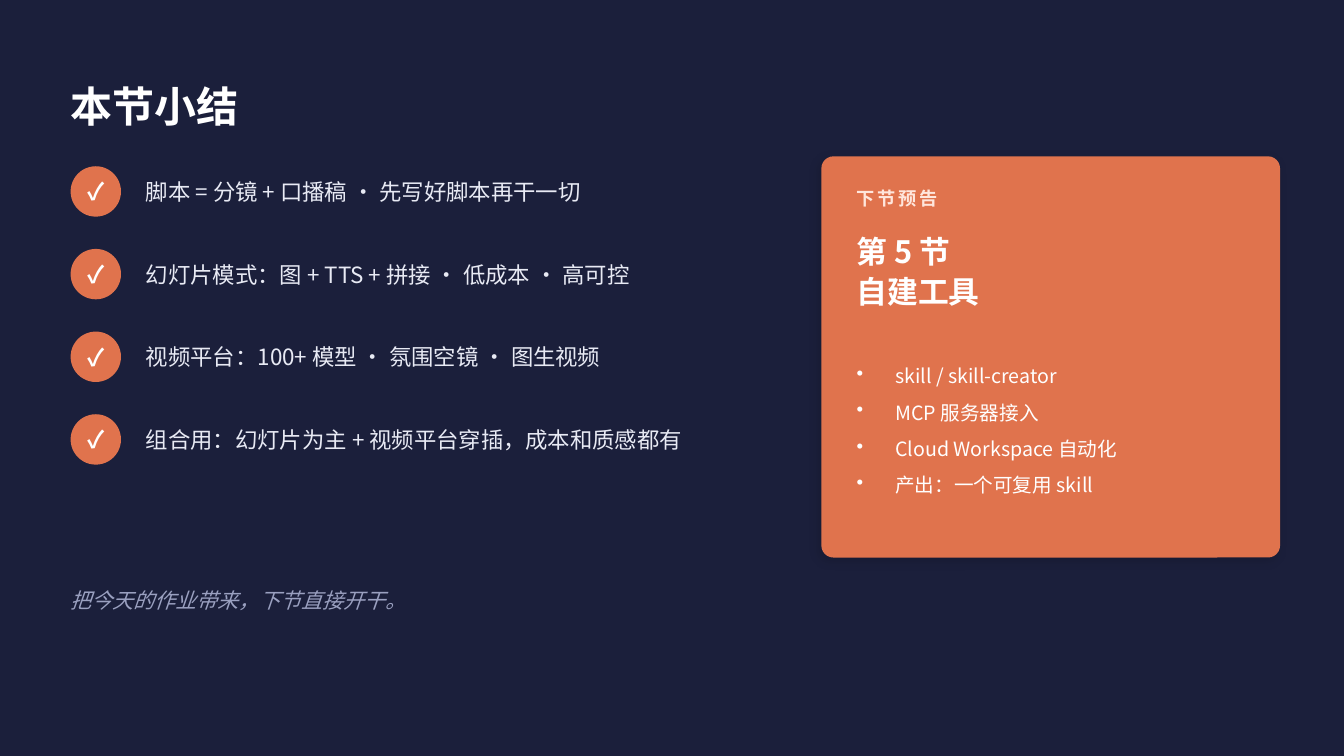
"""Build the lesson summary slide with a preview card for the next lesson."""
import pptx
import pptx.dml.color
import pptx.enum.shapes
import pptx.enum.text
import pptx.oxml.ns
import pptx.util
from lxml import etree

Cm, Pt = pptx.util.Cm, pptx.util.Pt
SHAPES = pptx.enum.shapes.MSO_SHAPE
ALIGN = pptx.enum.text.PP_ALIGN
qn = pptx.oxml.ns.qn

TITLE = "本节小结"
TAKEAWAYS = [
    "脚本 = 分镜 + 口播稿 · 先写好脚本再干一切",
    "幻灯片模式：图 + TTS + 拼接 · 低成本 · 高可控",
    "视频平台：100+ 模型 · 氛围空镜 · 图生视频",
    "组合用：幻灯片为主 + 视频平台穿插，成本和质感都有",
]
PREVIEW_LABEL = "下节预告"
PREVIEW_HEADING = ["第 5 节", "自建工具"]
PREVIEW_TOPICS = [
    "skill / skill-creator",
    "MCP 服务器接入",
    "Cloud Workspace 自动化",
    "产出：一个可复用 skill",
]
CLOSING = "把今天的作业带来，下节直接开干。"

FONT = "Noto Sans CJK SC"
NAVY, ORANGE, WHITE = "1B1F3B", "E0734D", "FFFFFF"
PALE, PEACH, MUTED = "E8EAF4", "FFE6DC", "9AA0C0"

LEFT = 1.78
ROW_TOP, ROW_PITCH, BADGE = 4.19, 2.083, 1.27
CARD_LEFT, CARD_TOP, CARD_WIDTH, CARD_HEIGHT = 20.7, 3.94, 11.56, 10.11
CARD_TEXT_LEFT, CARD_TEXT_WIDTH = 21.59, 10.03
BULLET_INDENT = Cm(0.97)


def color(value):
    return pptx.dml.color.RGBColor.from_string(value)


def add_bullet(para):
    properties = para._p.get_or_add_pPr()
    properties.set("marL", str(BULLET_INDENT))
    properties.set("indent", str(-BULLET_INDENT))
    etree.SubElement(properties, qn("a:buChar")).set("char", "•")


def write(box, lines, size, ink, bold=False, italic=False, align=ALIGN.LEFT,
          line_spacing=None, space_after=None, tracking=None, bullets=False):
    frame = box.text_frame
    frame.text = "\n".join(lines)
    frame.word_wrap = True
    frame.auto_size = pptx.enum.text.MSO_AUTO_SIZE.NONE
    frame.vertical_anchor = pptx.enum.text.MSO_ANCHOR.MIDDLE
    frame.margin_left = frame.margin_right = 0
    frame.margin_top = frame.margin_bottom = 0
    for para in frame.paragraphs:
        para.alignment = align
        if line_spacing:
            para.line_spacing = line_spacing
        if space_after:
            para.space_after = Pt(space_after)
        if bullets:
            add_bullet(para)
        font = para.font
        font.name, font.size = FONT, Pt(size)
        font.bold, font.italic = bold, italic
        font.color.rgb = color(ink)
        defaults = para._p.pPr.find(qn("a:defRPr"))
        etree.SubElement(defaults, qn("a:ea")).set("typeface", FONT)
        if tracking:
            defaults.set("spc", str(tracking * 100))


def add_text(page, left, top, width, height, lines, size, ink, **style):
    box = page.shapes.add_textbox(Cm(left), Cm(top), Cm(width), Cm(height))
    write(box, lines, size, ink, **style)


def add_filled(page, kind, left, top, width, height):
    shape = page.shapes.add_shape(kind, Cm(left), Cm(top), Cm(width), Cm(height))
    shape.shadow.inherit = False
    shape.fill.solid()
    shape.fill.fore_color.rgb = color(ORANGE)
    shape.line.fill.background()
    return shape


def add_soft_shadow(shape):
    effects = shape._element.spPr.find(qn("a:effectLst"))
    shadow = etree.SubElement(effects, qn("a:outerShdw"), blurRad=str(Pt(7)),
                              dist=str(Pt(3)), dir=str(135 * 60000),
                              algn="bl", rotWithShape="0")
    tint = etree.SubElement(shadow, qn("a:srgbClr"), val="000000")
    etree.SubElement(tint, qn("a:alpha"), val="12000")


def add_takeaways(page):
    for index, takeaway in enumerate(TAKEAWAYS):
        top = ROW_TOP + index * ROW_PITCH
        badge = add_filled(page, SHAPES.OVAL, LEFT, top, BADGE, BADGE)
        write(badge, ["✓"], 17, WHITE, bold=True, align=ALIGN.CENTER)
        add_text(page, 3.68, top, 17.02, BADGE, [takeaway], 16, PALE)


def add_preview(page):
    card = add_filled(page, SHAPES.ROUNDED_RECTANGLE,
                      CARD_LEFT, CARD_TOP, CARD_WIDTH, CARD_HEIGHT)
    card.adjustments[0] = 0.03
    add_soft_shadow(card)
    add_text(page, CARD_TEXT_LEFT, 4.52, CARD_TEXT_WIDTH, 0.97,
             [PREVIEW_LABEL], 13, PEACH, bold=True, tracking=2)
    add_text(page, CARD_TEXT_LEFT, 5.59, CARD_TEXT_WIDTH, 2.41,
             PREVIEW_HEADING, 22, WHITE, bold=True, line_spacing=1.08)
    add_text(page, CARD_TEXT_LEFT, 8.43, CARD_TEXT_WIDTH, 4.83,
             PREVIEW_TOPICS, 14, WHITE, space_after=9, bullets=True)


def main():
    deck = pptx.Presentation()
    deck.slide_width, deck.slide_height = Cm(33.87), Cm(19.05)
    page = deck.slides.add_slide(deck.slide_layouts.get_by_name("Title Only"))
    page.background.fill.solid()
    page.background.fill.fore_color.rgb = color(NAVY)

    title = page.shapes.title
    title.left, title.top = Cm(LEFT), Cm(1.78)
    title.width, title.height = Cm(27.94), Cm(1.78)
    write(title, [TITLE], 30, WHITE, bold=True)

    add_takeaways(page)
    add_preview(page)
    add_text(page, LEFT, 14.48, 17.78, 1.27, [CLOSING], 15, MUTED, italic=True)
    deck.save("out.pptx")


if __name__ == "__main__":
    main()
